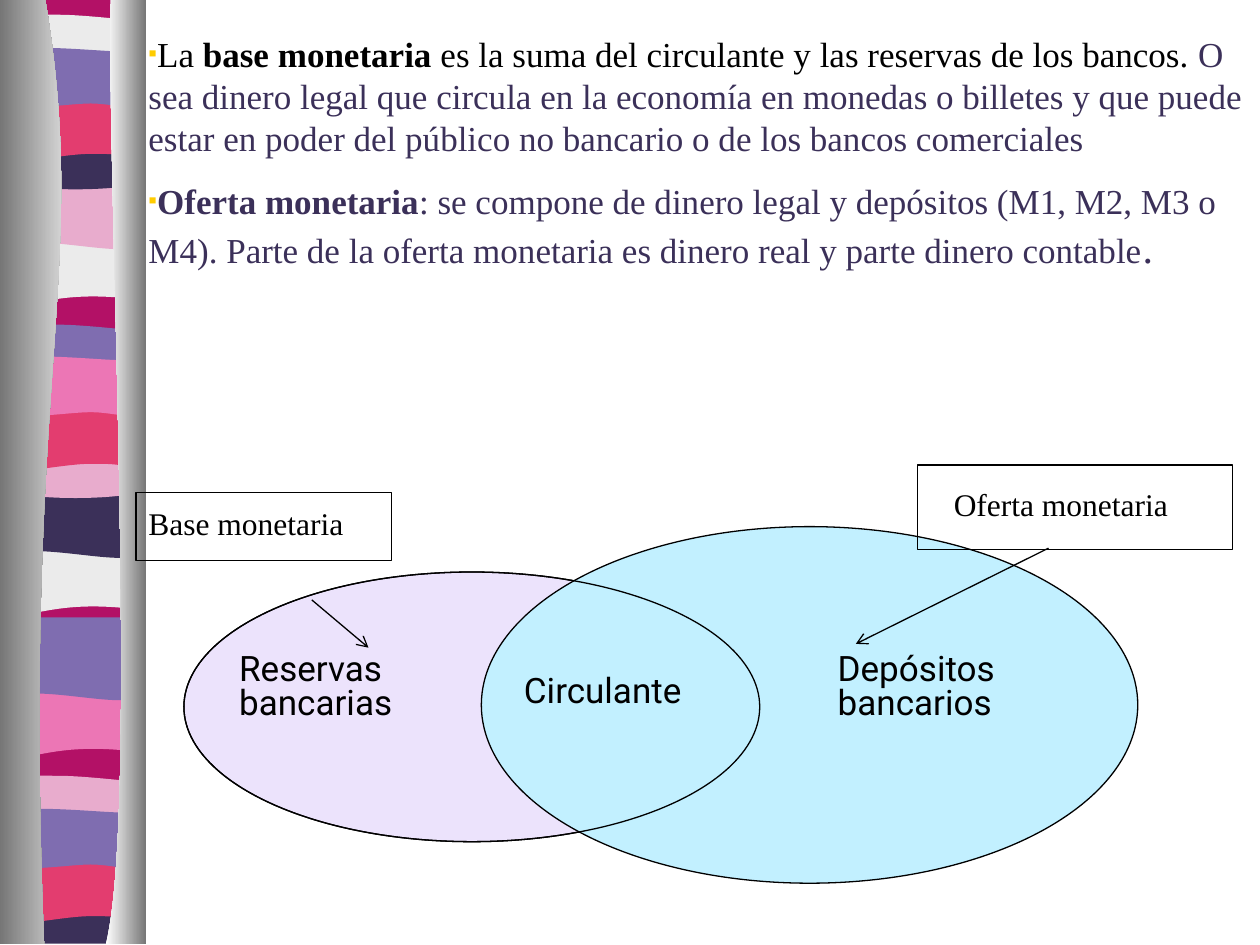
from lxml import etree
from pptx import Presentation
from pptx.dml.color import RGBColor
from pptx.enum.shapes import MSO_SHAPE
from pptx.enum.text import MSO_ANCHOR, PP_ALIGN
from pptx.oxml.ns import qn
from pptx.util import Pt

PX = 9144  # 100 px to the inch
STRETCH = 1.33  # bands overlap their neighbours by this much
OVAL, CALLOUT = MSO_SHAPE.OVAL, MSO_SHAPE.LINE_CALLOUT_1
MIDDLE, LEFT = MSO_ANCHOR.MIDDLE, PP_ALIGN.LEFT
SERIF, SANS = "Times New Roman", "Roboto"
BLACK, NAVY, GOLD = "000000", "3B3059", "FFCC00"
PLUM, PALE, ROSE = "B31166", "EBEBEB", "E8ACCD"
RED, VIOLET, PINK = "E33D6F", "7F6DB0", "EC76B5"
LILAC, SKY, GREY, WHITE = "ECE3FC", "C2F0FF", "767676", "FFFFFF"

# Outlines: a pair is a straight step, six numbers are a Bezier step.
BANDS = {
    "swell": [(114, 0), (114, 47), (39, 39, 24, 55, 5, 47), (5, 0)],
    "roll": [(114, 0), (114, 47), (96, 55, 39, 41, 5, 47), (5, 0)],
    "lens": [(114, 5), (114, 29), (96, 34, 24, 34, 5, 29), (5, 5),
             (12, 0, 29, 1, 47, 1), (65, 1, 100, 4, 114, 5)],
    "bowl": [(114, 0), (114, 32), (96, 38, 24, 38, 5, 32), (5, 0),
             (72, 5, 91, 0, 114, 0)],
    "arch": [(114, 0), (114, 47), (97, 42, 90, 42, 72, 42),
             (54, 42, 22, 47, 5, 47), (5, 0)],
    "wave": [(114, 5), (114, 36), (107, 41, 90, 36, 72, 36),
             (54, 36, 17, 41, 5, 36), (5, 5), (21, 0, 79, 5, 97, 5),
             (114, 5)],
    "foot": [(114, 0), (114, 24), (5, 24), (5, 0), (72, 5, 91, 0, 114, 0)],
}
STRIPES = [  # band, top, colour
    ("swell", 185, PALE), ("roll", 141, ROSE), ("lens", 16, PALE),
    ("bowl", 108, NAVY), ("arch", 74, RED), ("wave", 41, VIOLET),
    ("swell", 431, PALE), ("roll", 386, NAVY), ("lens", 262, VIOLET),
    ("bowl", 353, ROSE), ("arch", 320, RED), ("wave", 286, PINK),
    ("swell", 544, PINK), ("roll", 499, VIOLET), ("lens", 620, ROSE),
    ("foot", 721, NAVY), ("arch", 679, RED), ("wave", 645, VIOLET),
]
BASE = [(114, 0), (114, 747), (5, 747), (5, 0)]
EDGES = [
    ([(36, 0), (72, 216, 17, 296, 35, 749), (0, 749), (0, 0)], GREY, WHITE),
    ([(88, 0), (84, 125, 111, 646, 84, 749), (116, 749), (116, 0)],
     WHITE, GREY),
]

NOTES = [  # runs: text, bold, colour, size
    [("La ", False, BLACK, 20),
     ("base monetaria", True, BLACK, 20),
     (" es la suma del circulante y las reservas de los bancos.",
      False, BLACK, 20),
     (" O sea dinero legal que circula en la economía en monedas o billetes"
      " y que puede estar en poder del público no bancario o de los bancos"
      " comerciales", False, NAVY, 20)],
    [("Oferta monetaria", True, NAVY, 20),
     (": se compone de dinero legal y depósitos (M1, M2, M3 o M4). Parte de"
      " la oferta monetaria es dinero real y parte dinero contable",
      False, NAVY, 20),
     (".", False, NAVY, 24)],
]
BASE_BOX, OFFER_BOX = (146, 454, 457, 214), (382, 418, 521, 283)
LABELS = [
    ("Circulante", (406, 532, 168, 37)),
    ("Depósitos bancarios", (655, 515, 192, 64)),
    ("Reservas bancarias", (180, 515, 160, 64)),
]
CALLOUTS = [  # text, box, left inset, pointer
    ("Oferta monetaria", (728, 369, 250, 67), 29,
     (0.986, 0.417, 2.12, -0.195)),
    ("Base monetaria", (108, 391, 203, 54), 10,
     (1.576, 0.687, 2.279, 0.909)),
]

prs = Presentation()
prs.slide_width, prs.slide_height = 1000 * PX, 750 * PX
shapes = prs.slides.add_slide(prs.slide_layouts[6]).shapes


def rgb(code):
    return RGBColor.from_string(code)


def emu(box):
    return [v * PX for v in box]


def outline(path, top=0, stretch=1):
    """Draw a closed outline, stretched in height about its middle."""
    pts = [step[i:i + 2] for step in path for i in range(0, len(step), 2)]
    mid = max(y for _, y in pts) / 2
    pts = [(x * PX, (top + mid + (y - mid) * stretch) * PX) for x, y in pts]
    pen = shapes.build_freeform(*pts[0])
    pen.add_line_segments(pts[1:], close=True)
    shape = pen.convert_to_shape()
    bend(shape, path)
    shape.shadow.inherit = False
    shape.line.fill.background()
    return shape


def bend(shape, path):
    """Join each three line steps of a Bezier step into one curve."""
    lines = iter(list(shape._element.iter(qn("a:lnTo"))))
    for step in path[1:]:
        line = next(lines)
        if len(step) == 6:
            curve = etree.Element(qn("a:cubicBezTo"))
            line.addprevious(curve)
            for part in (line, next(lines), next(lines)):
                curve.append(part[0])
                part.getparent().remove(part)


def paint(shape, color):
    shape.fill.solid()
    shape.fill.fore_color.rgb = rgb(color)


def framed(kind, box, color=None):
    shape = shapes.add_shape(kind, *emu(box))
    shape.shadow.inherit = False
    if color:
        paint(shape, color)
    else:
        shape.fill.background()
    shape.line.color.rgb = rgb(BLACK)
    shape.line.width = Pt(0.75)
    return shape


def textbox(box):
    frame = shapes.add_textbox(*emu(box)).text_frame
    frame.word_wrap = True
    return frame


def write(frame, text, face, size):
    para = frame.paragraphs[0]
    para.text = text
    para.alignment = LEFT
    para.line_spacing = 0.8
    para.font.name, para.font.size = face, Pt(size)
    para.font.color.rgb = rgb(BLACK)


def bullet(para):
    props = para._p.get_or_add_pPr()
    color = etree.SubElement(props, qn("a:buClr"))
    etree.SubElement(color, qn("a:srgbClr"), val=GOLD)
    etree.SubElement(props, qn("a:buSzPct"), val="70000")
    etree.SubElement(props, qn("a:buFont"), typeface=SERIF)
    etree.SubElement(props, qn("a:buChar"), char="▪")


paint(outline(BASE), PLUM)
for band, top, color in STRIPES:
    paint(outline(BANDS[band], top, STRETCH), color)
for path, *colors in EDGES:
    fill = outline(path).fill
    fill.gradient()
    fill.gradient_angle = 0
    for stop, color in zip(fill.gradient_stops, colors):
        stop.color.rgb = rgb(color)

frame = textbox((108, 21, 892, 269))
for i, runs in enumerate(NOTES):
    para = frame.add_paragraph() if i else frame.paragraphs[0]
    bullet(para)
    if i:
        para.space_before = Pt(12)
    para.font.name = SERIF
    for text, bold, color, size in runs:
        run = para.add_run()
        run.text = text
        run.font.bold, run.font.size = bold, Pt(size)
        run.font.color.rgb = rgb(color)

framed(OVAL, BASE_BOX, LILAC)
framed(OVAL, OFFER_BOX, SKY)
for text, box in LABELS:
    write(textbox(box), text, SANS, 20)
framed(OVAL, BASE_BOX)
for text, box, inset, pointer in CALLOUTS:
    shape = framed(CALLOUT, box)
    for i, value in enumerate(pointer):
        shape.adjustments[i] = value
    etree.SubElement(shape.line._get_or_add_ln(), qn("a:tailEnd"),
                     type="arrow")
    shape.text_frame.margin_left = inset * PX
    shape.text_frame.vertical_anchor = MIDDLE
    write(shape.text_frame, text, SERIF, 18)

prs.save("out.pptx")
